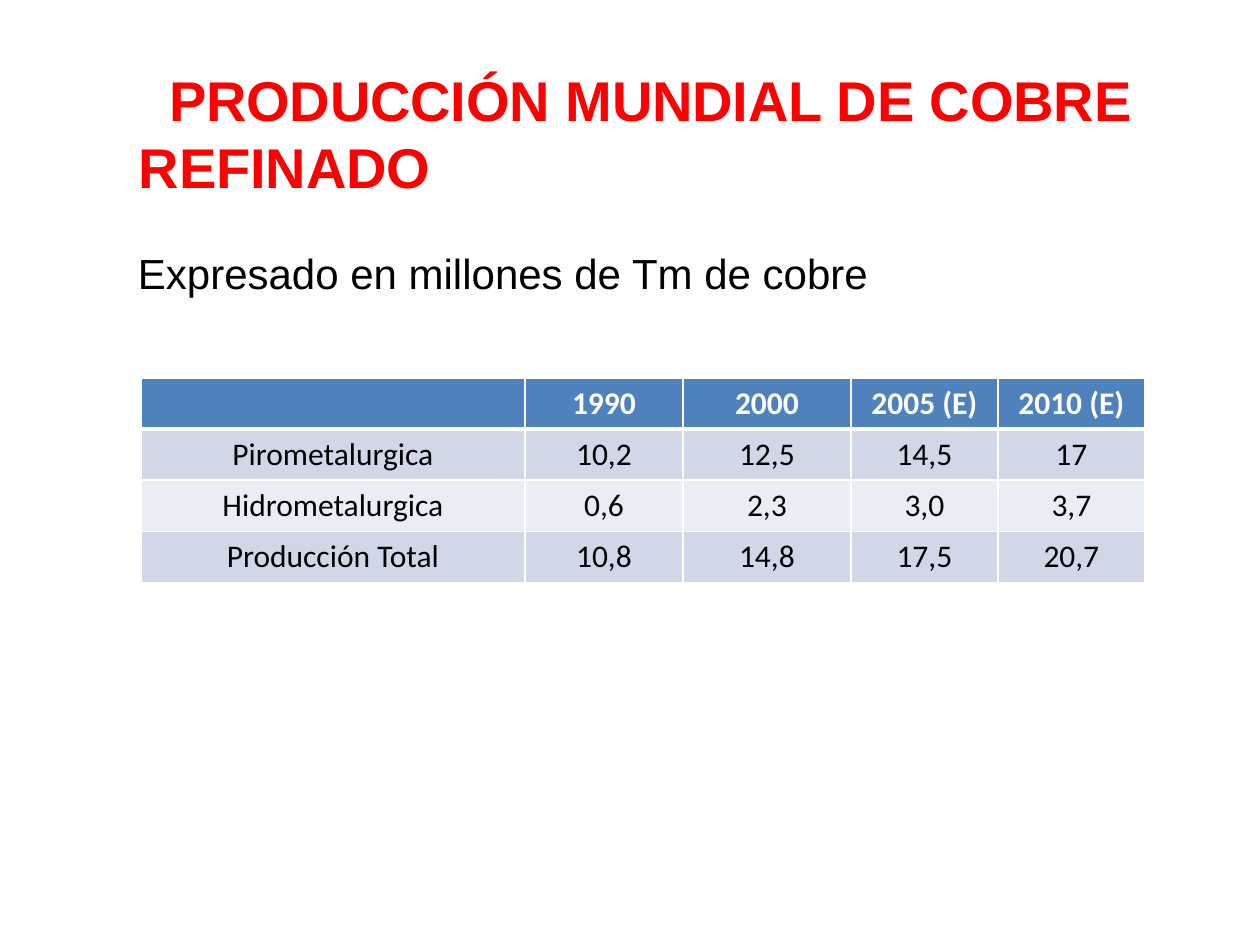
from pptx import Presentation
from pptx.dml.color import RGBColor
from pptx.enum.text import MSO_ANCHOR as Anchor, MSO_AUTO_SIZE as Fit, PP_ALIGN as Align
from pptx.oxml import parse_xml
from pptx.oxml.ns import nsdecls
from pptx.util import Emu, Pt

SCALE = 914400 / 126
WHITE, BLACK, RED = "FFFFFF", "000000", "FF0000"
BLUE, BANDS = "4F81BD", ("D0D8E8", "E9EDF4")
COLS = (384, 158, 168, 147, 147)
ROWS = (
    ("", "1990", "2000", "2005 (E)", "2010 (E)"),
    ("Pirometalurgica", "10,2", "12,5", "14,5", "17"),
    ("Hidrometalurgica", "0,6", "2,3", "3,0", "3,7"),
    ("Producción Total", "10,8", "14,8", "17,5", "20,7"),
)


def px(size):
    return Emu(round(size * SCALE))


def tint(code):
    return RGBColor.from_string(code)


def style(para, face, size, color, bold, align):
    para.alignment = align
    for run in para.runs:
        font = run.font
        font.name, font.size, font.bold = face, Pt(size), bold
        font.color.rgb = tint(color)


def place(shape, box):
    shape.left, shape.top, shape.width, shape.height = map(px, box)
    frame = shape.text_frame
    frame.word_wrap, frame.auto_size = True, Fit.NONE
    frame.vertical_anchor = Anchor.TOP
    frame.margin_left = frame.margin_right = 0
    frame.margin_top = frame.margin_bottom = 0
    return frame


def add_title(slide, box):
    frame = place(slide.shapes.title, box)
    frame.margin_top = px(61)
    frame.text = "PRODUCCIÓN MUNDIAL DE COBRE REFINADO"
    para = frame.paragraphs[0]
    props = para._p.get_or_add_pPr()
    props.set("marL", str(px(66)))
    props.set("indent", str(px(30)))
    style(para, "Arial", 32, RED, True, Align.LEFT)
    para.runs[0].font._element.set("spc", "-10")


def add_note(slide, box):
    frame = place(slide.shapes.add_textbox(0, 0, 0, 0), box)
    frame.margin_left = frame.margin_top = px(1)
    frame.text = "Expresado en millones de Tm de cobre"
    style(frame.paragraphs[0], "Arial", 24, BLACK, False, Align.LEFT)


def add_edges(cell, base):
    props = cell._tc.get_or_add_tcPr()
    for side, width in (("L", 1), ("R", 1), ("T", 1), ("B", base)):
        props.append(parse_xml(
            f'<a:ln{side} {nsdecls("a")} w="{Pt(width)}"><a:solidFill>'
            f'<a:srgbClr val="{WHITE}"/></a:solidFill></a:ln{side}>'))


def add_grid(slide, box):
    grid = slide.shapes.add_table(len(ROWS), len(COLS), *map(px, box)).table
    for col, width in zip(grid.columns, COLS):
        col.width = px(width)
    for r, row in enumerate(ROWS):
        head = r == 0
        grid.rows[r].height = px(box[3] / len(ROWS))
        for c, text in enumerate(row):
            cell = grid.cell(r, c)
            add_edges(cell, 3 if head else 1)
            cell.fill.solid()
            cell.fill.fore_color.rgb = tint(BLUE if head else BANDS[(r - 1) % 2])
            cell.text_frame.text = text
            style(cell.text_frame.paragraphs[0], "Calibri", 18,
                  WHITE if head else BLACK, head, Align.CENTER)


def main():
    deck = Presentation()
    deck.slide_width, deck.slide_height = px(1260), px(945)
    slide = deck.slides.add_slide(deck.slide_layouts[5])
    add_title(slide, (73, 4, 1113, 205))
    add_note(slide, (137, 247, 733, 54))
    add_grid(slide, (141, 378, sum(COLS), 204))
    deck.save("out.pptx")


if __name__ == "__main__":
    main()
